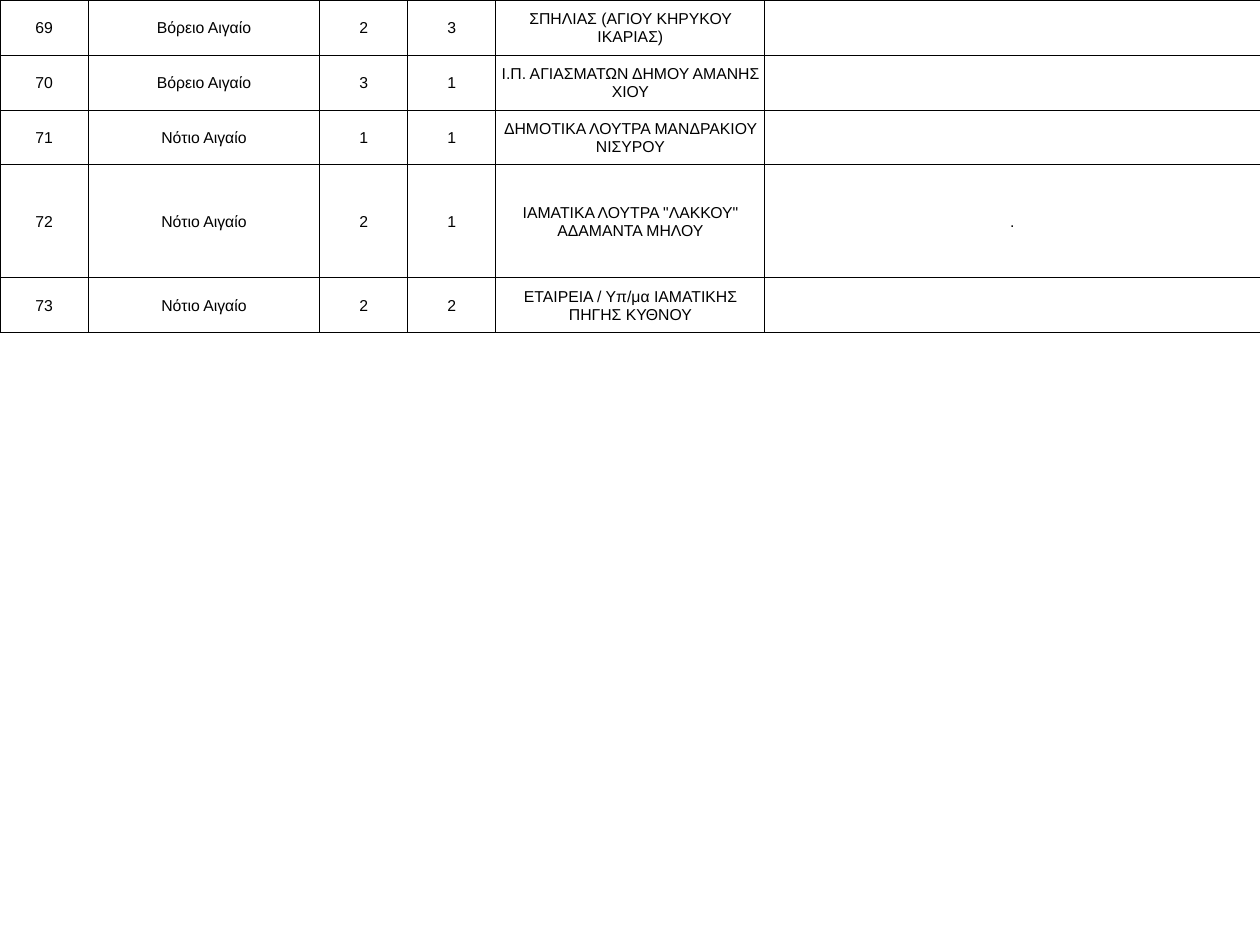
from dataclasses import dataclass

from lxml import etree
from pptx import Presentation
from pptx.dml.color import RGBColor
from pptx.enum import text as t
from pptx.oxml import ns
from pptx.util import Pt

BLACK = RGBColor(0, 0, 0)
WHITE = RGBColor(255, 255, 255)
FONT = "Arial"
SIZE = Pt(9)
EDGE = Pt(0.5)
PAD = Pt(0.75)
WIDTHS = (50.3, 132.5, 50.3, 50.3, 153.7, 282.9)
LOW, TALL = 31.43, 64.57
NORTH = "Βόρειο Αιγαίο"
SOUTH = "Νότιο Αιγαίο"


@dataclass(frozen=True)
class Spa:
    num: int
    area: str
    zone: int
    rank: int
    name: str
    note: str = ""
    height: float = LOW

    def texts(self) -> tuple[str, ...]:
        return (str(self.num), self.area, str(self.zone),
                str(self.rank), self.name, self.note)


SPAS = (
    Spa(69, NORTH, 2, 3, "ΣΠΗΛΙΑΣ (ΑΓΙΟΥ ΚΗΡΥΚΟΥ ΙΚΑΡΙΑΣ)"),
    Spa(70, NORTH, 3, 1, "Ι.Π. ΑΓΙΑΣΜΑΤΩΝ ΔΗΜΟΥ ΑΜΑΝΗΣ ΧΙΟΥ"),
    Spa(71, SOUTH, 1, 1, "ΔΗΜΟΤΙΚΑ ΛΟΥΤΡΑ ΜΑΝΔΡΑΚΙΟΥ ΝΙΣΥΡΟΥ"),
    Spa(72, SOUTH, 2, 1, "ΙΑΜΑΤΙΚΑ ΛΟΥΤΡΑ \"ΛΑΚΚΟΥ\" ΑΔΑΜΑΝΤΑ ΜΗΛΟΥ", ".", TALL),
    Spa(73, SOUTH, 2, 2, "ΕΤΑΙΡΕΙΑ / Υπ/μα ΙΑΜΑΤΙΚΗΣ ΠΗΓΗΣ ΚΥΘΝΟΥ"),
)


def frame(cell) -> None:
    props = cell._tc.get_or_add_tcPr()
    for side in ("lnL", "lnR", "lnT", "lnB"):
        line = etree.SubElement(props, ns.qn(f"a:{side}"), w=str(int(EDGE)))
        fill = etree.SubElement(line, ns.qn("a:solidFill"))
        etree.SubElement(fill, ns.qn("a:srgbClr"), val=str(BLACK))


def write(cell, words: str) -> None:
    frame(cell)
    cell.fill.solid()
    cell.fill.fore_color.rgb = WHITE
    cell.margin_left = cell.margin_right = cell.margin_top = PAD
    cell.margin_bottom = Pt(0)
    cell.vertical_anchor = t.MSO_ANCHOR.MIDDLE
    para = cell.text_frame.paragraphs[0]
    para.alignment = t.PP_ALIGN.CENTER
    if words:
        run = para.add_run()
        run.text = words
        run.font.name = FONT
        run.font.size = SIZE
        run.font.color.rgb = BLACK


def draw(slide, spas: tuple[Spa, ...]) -> None:
    high = sum(spa.height for spa in spas)
    grid = slide.shapes.add_table(
        len(spas), len(WIDTHS), Pt(0), Pt(0), Pt(sum(WIDTHS)), Pt(high)).table
    grid.first_row = grid.horz_banding = False
    for col, width in zip(grid.columns, WIDTHS):
        col.width = Pt(width)
    for row, spa in zip(grid.rows, spas):
        row.height = Pt(spa.height)
        for cell, words in zip(row.cells, spa.texts()):
            write(cell, words)


def main() -> None:
    deck = Presentation()
    deck.slide_width, deck.slide_height = Pt(720), Pt(540)
    slide = deck.slides.add_slide(deck.slide_layouts[6])
    draw(slide, SPAS)
    deck.save("out.pptx")


if __name__ == "__main__":
    main()
